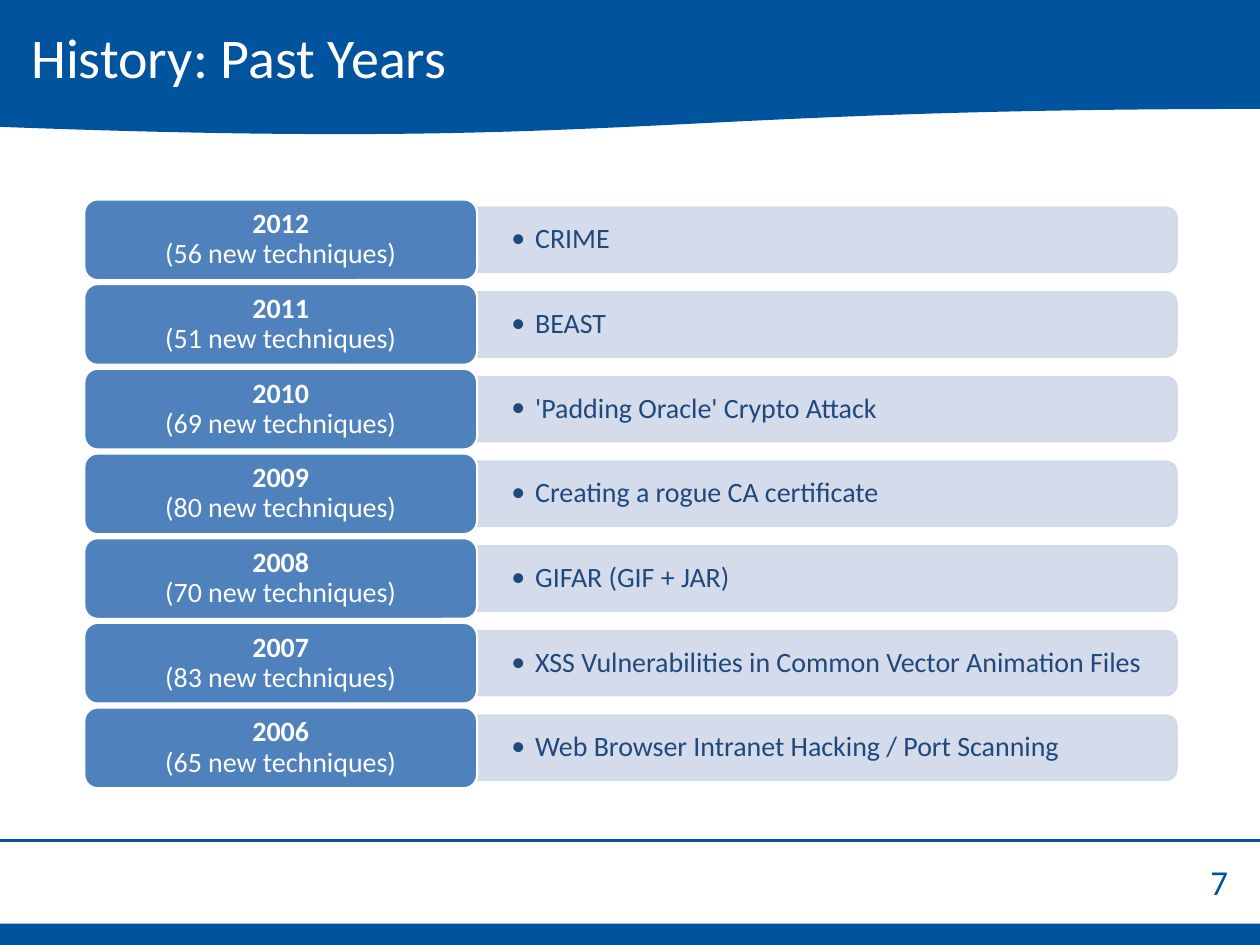
from lxml import etree
from pptx import Presentation
from pptx import util as u
from pptx.dml import color
from pptx.enum import shapes, text
from pptx.oxml import ns

KIND = shapes.MSO_SHAPE
NAVY, WHITE, BLUE, PALE, INK = "00549E", "FFFFFF", "4F81BD", "D0D8E8", "1F497D"
ROWS = [
    ("2012", 56, "CRIME"),
    ("2011", 51, "BEAST"),
    ("2010", 69, "'Padding Oracle' Crypto Attack"),
    ("2009", 80, "Creating a rogue CA certificate"),
    ("2008", 70, "GIFAR (GIF + JAR)"),
    ("2007", 83, "XSS Vulnerabilities in Common Vector Animation Files"),
    ("2006", 65, "Web Browser Intranet Hacking / Port Scanning"),
]


def rgb(code):
    """Turn a hex string into a colour."""
    return color.RGBColor.from_string(code)


def style(item, **vals):
    """Set each named value on an item."""
    for key, val in vals.items():
        setattr(item, key, val)


def sub(node, tag, **attrs):
    """Append a DrawingML element to a node."""
    return etree.SubElement(node, ns.qn("a:" + tag), attrs)


def fade(fill):
    """Make a solid fill or line 90% opaque."""
    for node in fill.iter(ns.qn("a:srgbClr")):
        sub(node, "alpha", val="90000")


def draw(page, kind, box, fill, line=None, width=1.25):
    """Add a flat shape with a fill and an optional line."""
    form = page.shapes.add_shape(kind, *map(u.Cm, box))
    form.shadow.inherit = False
    form.fill.solid()
    form.fill.fore_color.rgb = rgb(fill)
    if line:
        form.line.color.rgb = rgb(line)
        form.line.width = u.Pt(width)
    else:
        form.line.fill.background()
    return form


def frame(form, side=0.25, edge=0.13):
    """Prepare the text frame of a shape and return its first paragraph."""
    pad, gap = u.Cm(side), u.Cm(edge)
    style(form.text_frame, word_wrap=True, vertical_anchor=text.MSO_ANCHOR.MIDDLE,
          margin_left=pad, margin_right=pad, margin_top=gap, margin_bottom=gap)
    return form.text_frame.paragraphs[0]


def write(para, words, size, ink, bold=False):
    """Add a run of text to a paragraph."""
    run = para.add_run()
    run.text = words
    style(run.font, name="Calibri", size=u.Pt(size), bold=bold)
    run.font.color.rgb = rgb(ink)


def head(page, x, y, w, h):
    """Draw the wavy title band."""
    draw(page, KIND.FLOWCHART_DOCUMENT, (x, y, w, h), NAVY)
    box = page.shapes.add_textbox(*map(u.Cm, (x + 0.38, y + 0.38, 21.59, 1.52)))
    write(frame(box), "History: Past Years", 32, WHITE)


def foot(page, x, y, w, h):
    """Draw the rule, page number and bottom strip."""
    rule = page.shapes.add_connector(
        shapes.MSO_CONNECTOR.STRAIGHT, *map(u.Cm, (x, y, x + w, y)))
    rule.line.color.rgb = rgb(NAVY)
    rule.line.width = u.Pt(1.5)
    sub(rule._element.spPr, "effectLst")
    draw(page, KIND.RECTANGLE, (x, y + h - 0.43, w, 0.43), NAVY)
    box = page.shapes.add_textbox(*map(u.Cm, (x + w - 4.45, y + 0.28, 4.06, 1.12)))
    para = frame(box)
    para.alignment = text.PP_ALIGN.RIGHT
    write(para, "7", 20, NAVY)


def bar(page, x, y, w, h, words):
    """Draw a pale bar, rounded on its right, with a bullet."""
    box = (x + (w - h) / 2, y + (h - w) / 2, h, w)
    form = draw(page, KIND.ROUND_2_SAME_RECTANGLE, box, PALE, PALE)
    form.rotation = 90
    fade(form._element.spPr)
    para = frame(page.shapes.add_textbox(*map(u.Cm, (x, y, w, h))), 0.69, 0.1)
    props = para._p.get_or_add_pPr()
    style(para, line_spacing=0.9)
    props.set("marL", str(u.Cm(0.48)))
    props.set("indent", str(u.Cm(-0.48)))
    sub(sub(props, "buClr"), "srgbClr", val=INK)
    sub(props, "buFont", typeface="Calibri")
    sub(props, "buChar", char="•")
    write(para, words, 16, INK)


def label(page, x, y, w, h, year, count):
    """Draw a year label with its count of techniques."""
    form = draw(page, KIND.ROUNDED_RECTANGLE, (x, y, w, h), BLUE, WHITE)
    para = frame(form, 0.25, 0.16)
    style(para, alignment=text.PP_ALIGN.CENTER, line_spacing=0.9)
    write(para, year, 16, WHITE, True)
    para.add_line_break()
    write(para, f"({count} new techniques)", 16, WHITE)


def years(page, x, y, w, h):
    """Stack one row per year in the given box."""
    gap, left, thick = 0.08, 7.92, 1.3
    tall = (h + gap) / len(ROWS) - gap
    for num, (year, count, words) in enumerate(ROWS):
        top = y + num * (tall + gap)
        bar(page, x + left, top + (tall - thick) / 2, w - left, thick, words)
        label(page, x, top, left, tall, year, count)


def main():
    """Build and save the slide."""
    deck = Presentation()
    style(deck, slide_width=u.Cm(25.4), slide_height=u.Cm(19.05))
    page = deck.slides.add_slide(deck.slide_layouts[6])
    head(page, 0, 0, 25.4, 2.74)
    foot(page, 0, 16.94, 25.4, 2.11)
    years(page, 1.7, 4.02, 22.02, 11.87)
    deck.save("out.pptx")


if __name__ == "__main__":
    main()
